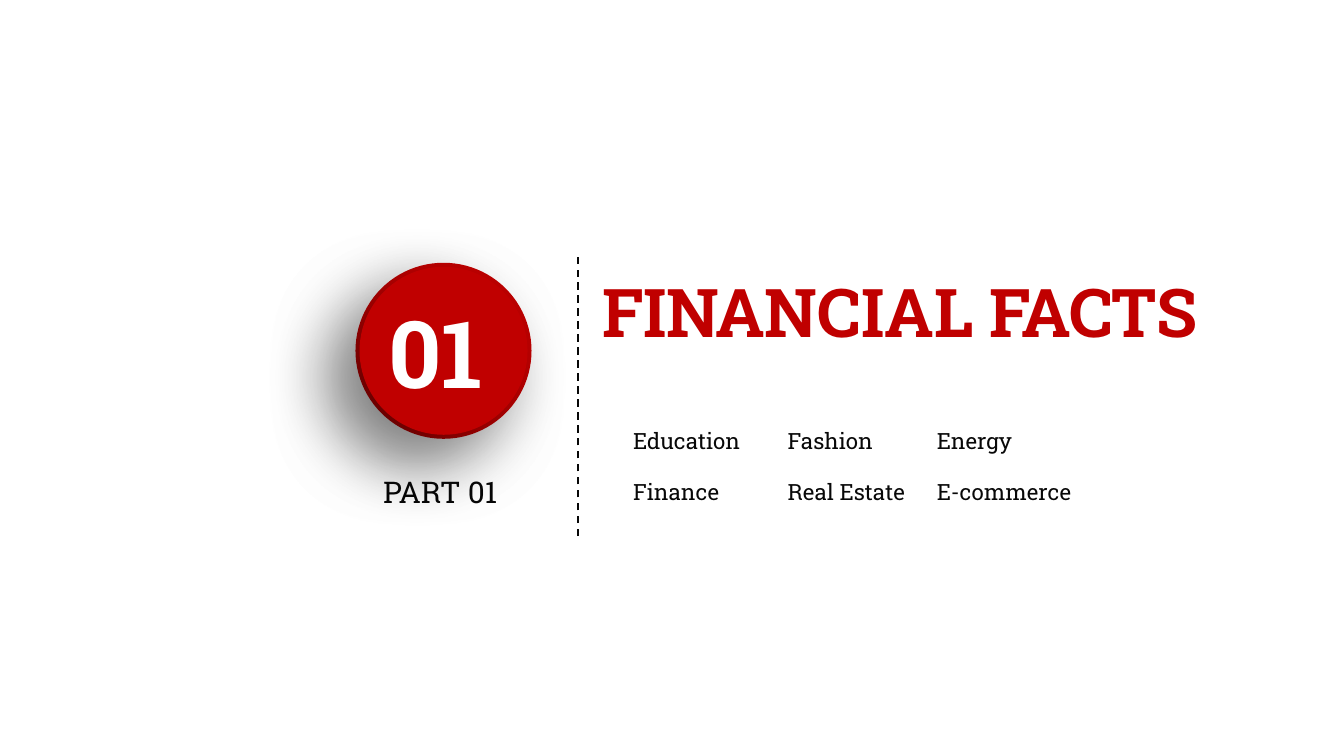
from pptx import Presentation
from pptx.dml.color import RGBColor
from pptx.enum.dml import MSO_LINE
from pptx.enum.shapes import MSO_CONNECTOR, MSO_SHAPE
from pptx.enum.text import MSO_ANCHOR, MSO_AUTO_SIZE, PP_ALIGN
from pptx.oxml import parse_xml
from pptx.oxml.ns import nsdecls, qn
from pptx.util import Inches, Pt

DASH = MSO_LINE.DASH
STRAIGHT = MSO_CONNECTOR.STRAIGHT
DONUT, OVAL = MSO_SHAPE.DONUT, MSO_SHAPE.OVAL
MIDDLE, NO_FIT = MSO_ANCHOR.MIDDLE, MSO_AUTO_SIZE.NONE
LEFT, CENTER = PP_ALIGN.LEFT, PP_ALIGN.CENTER

# Content
TITLE = "FINANCIAL FACTS"
NUMBER = "01"
PART = "PART 01"
TOPICS = [
    ["Education", "Fashion", "Energy"],
    ["Finance", "Real Estate", "E-commerce"],
]

# Theme
RED, INK, WHITE = (RGBColor.from_string(c) for c in ("C00000", "080808", "FFFFFF"))
THEME = {
    "title": {"name": "Roboto Slab", "size": Pt(36), "bold": True, "color": RED},
    "number": {"name": "Roboto Slab", "size": Pt(50), "bold": True, "color": WHITE},
    "part": {"name": "Roboto Slab", "size": Pt(16), "bold": False, "color": INK},
    "topic": {"name": "Roboto Slab", "size": Pt(12), "bold": False, "color": INK},
}

# Layout in inches
SLIDE_WIDTH = 10
SLIDE_HEIGHT = SLIDE_WIDTH * 9 / 16
TITLE_BOX = (4.22, 1.96, 4.95, 0.71)
NUMBER_BOX = (2.89, 2.19, 0.99, 0.84)
PART_BOX = (2.85, 3.52, 0.99, 0.27)
DIVIDER_X, DIVIDER_TOP, DIVIDER_BOTTOM = 4.3, 1.88, 3.99
BADGE_X, BADGE_Y = 3.3, 2.61
RING_SIZE, DISC_SIZE = 1.31, 1.25
TOPIC_COLUMNS = [(4.64, 1.12), (5.79, 1.08), (6.9, 1.38)]  # left, width
TOPIC_TOP, ROW_STEP, TOPIC_HEIGHT = 3.14, 0.38, 0.27


def write(holder, text, style, inset=(0, 0), align=LEFT):
    frame = holder.text_frame
    side, edge = (Inches(value) for value in inset)
    frame_format = {
        "word_wrap": True, "auto_size": NO_FIT, "vertical_anchor": MIDDLE,
        "margin_left": side, "margin_right": side,
        "margin_top": edge, "margin_bottom": edge,
    }
    for attribute, value in frame_format.items():
        setattr(frame, attribute, value)
    paragraph = frame.paragraphs[0]
    paragraph.alignment = align
    run = paragraph.add_run()
    run.text = text
    for attribute, value in THEME[style].items():
        if attribute == "color":
            run.font.color.rgb = value
        else:
            setattr(run.font, attribute, value)


def add_label(slide, box, text, style, inset=(0, 0)):
    label = slide.shapes.add_textbox(*map(Inches, box))
    write(label, text, style, inset)


def add_badge_part(badge, kind, size):
    part = badge.shapes.add_shape(
        kind, Inches(BADGE_X - size / 2), Inches(BADGE_Y - size / 2),
        Inches(size), Inches(size))
    part.fill.solid()
    part.fill.fore_color.rgb = RED
    part.line.fill.background()
    part.shadow.inherit = False
    effects = part._element.spPr.find(qn("a:effectLst"))
    effects.append(parse_xml(
        f'<a:outerShdw {nsdecls("a")} blurRad="{Pt(35)}" dist="{Pt(20)}" '
        'dir="8100000" algn="tr" rotWithShape="0"><a:srgbClr val="000000">'
        '<a:alpha val="50000"/></a:srgbClr></a:outerShdw>'))
    return part


def main():
    deck = Presentation()
    deck.slide_width, deck.slide_height = Inches(SLIDE_WIDTH), Inches(SLIDE_HEIGHT)
    slide = deck.slides.add_slide(deck.slide_layouts[5])

    # Title
    title = slide.shapes.title
    title.left, title.top, title.width, title.height = map(Inches, TITLE_BOX)
    write(title, TITLE, "title", (0.1, 0.05), CENTER)

    # Divider
    divider = slide.shapes.add_connector(
        STRAIGHT, Inches(DIVIDER_X), Inches(DIVIDER_BOTTOM),
        Inches(DIVIDER_X), Inches(DIVIDER_TOP))
    divider.line.color.rgb = INK
    divider.line.width = Pt(1)
    divider.line.dash_style = DASH
    divider._element.spPr.append(parse_xml(f'<a:effectLst {nsdecls("a")}/>'))

    # Part label and number badge
    add_label(slide, PART_BOX, PART, "part")
    badge = slide.shapes.add_group_shape()
    ring = add_badge_part(badge, DONUT, RING_SIZE)
    ring.adjustments[0] = 0.05
    add_badge_part(badge, OVAL, DISC_SIZE)

    # Topic grid
    for row, topics in enumerate(TOPICS):
        top = TOPIC_TOP + row * ROW_STEP
        for topic, (left, width) in zip(topics, TOPIC_COLUMNS):
            add_label(slide, (left, top, width, TOPIC_HEIGHT), topic, "topic",
                      (0.07, 0.03))

    # Number on the badge
    add_label(slide, NUMBER_BOX, NUMBER, "number")

    deck.save("out.pptx")


if __name__ == "__main__":
    main()
